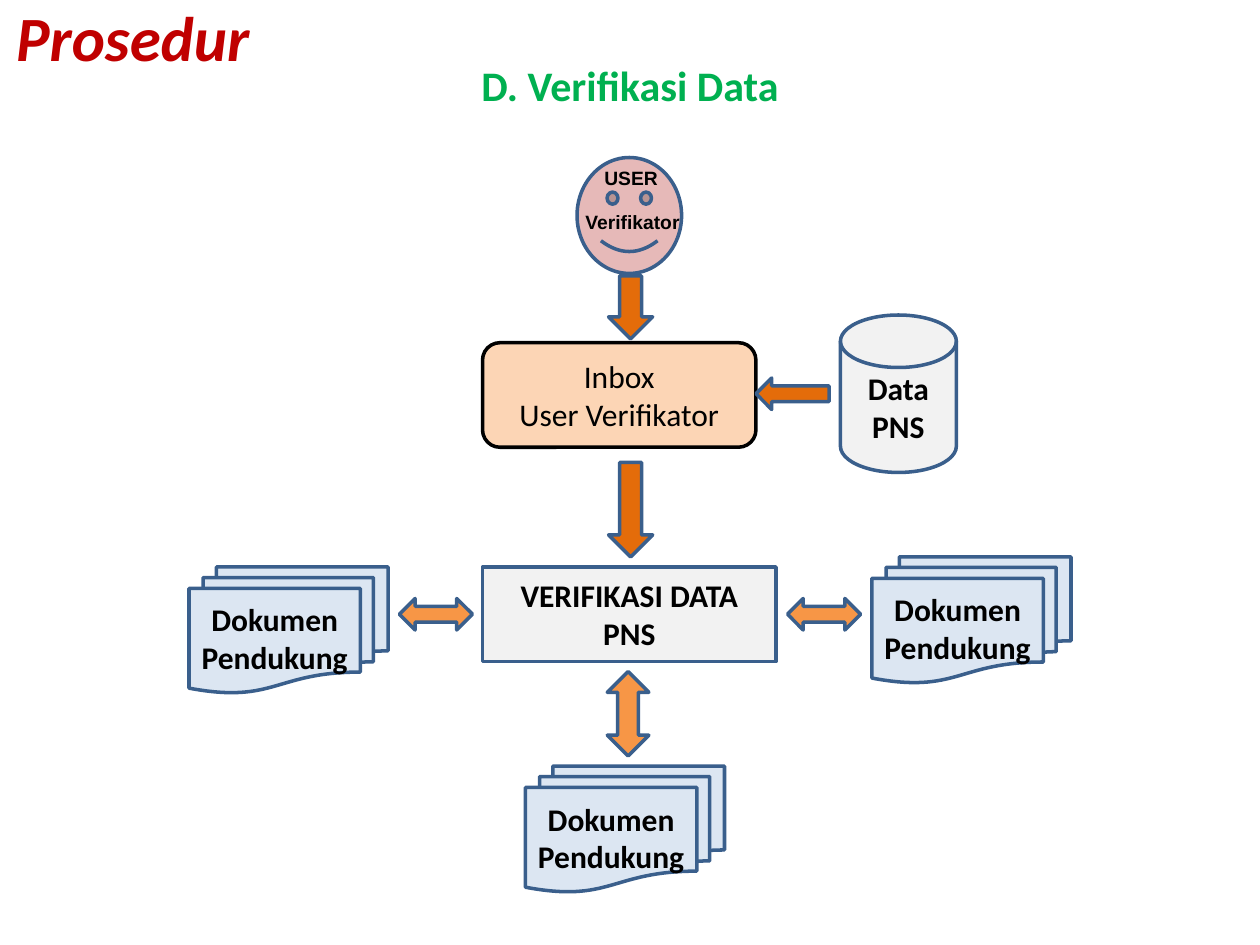
from lxml.etree import SubElement
from pptx import Presentation
from pptx.dml.color import RGBColor
from pptx.enum.shapes import MSO_SHAPE
from pptx.enum.text import MSO_ANCHOR, MSO_AUTO_SIZE, PP_ALIGN
from pptx.oxml.ns import qn
from pptx.util import Inches, Pt

COLORS = {
    "title": "C00000",
    "subtitle": "00B050",
    "text": "000000",
    "outline": "3A5F8C",
    "process": "F2F2F2",
    "user": "E6B9B8",
    "inbox": "FCD5B5",
    "document": "DCE6F2",
    "flow": "E46C0A",
    "exchange": "F79646",
}


class FlowSlide:
    def __init__(self, slide):
        self.slide = slide

    def color(self, name):
        return RGBColor.from_string(COLORS[name])

    def add_lines(self, frame, lines, size, color="text", font="Calibri",
                  bold=True, italic=False, align=PP_ALIGN.CENTER):
        for index, line in enumerate(lines):
            paragraph = frame.add_paragraph() if index else frame.paragraphs[0]
            paragraph.alignment = align
            run = paragraph.add_run()
            run.text = line
            run.font.name = font
            run.font.size = Pt(size)
            run.font.bold = bold
            run.font.italic = italic
            run.font.color.rgb = self.color(color)

    def heading(self, index, place, line, size, color, **style):
        holder = self.slide.placeholders[index]
        holder.left, holder.top, holder.width, holder.height = map(Inches, place)
        frame = holder.text_frame
        frame.auto_size = MSO_AUTO_SIZE.NONE
        self.add_lines(frame, [line], size, color, **style)
        SubElement(frame.paragraphs[0]._p.get_or_add_pPr(), qn("a:buNone"))

    def shape(self, kind, place, fill, lines=(), outline="outline", bold=True):
        shape = self.slide.shapes.add_shape(kind, *map(Inches, place))
        shape.shadow.inherit = False
        shape.fill.solid()
        shape.fill.fore_color.rgb = self.color(fill)
        shape.line.color.rgb = self.color(outline)
        shape.line.width = Pt(2)
        shape.text_frame.vertical_anchor = MSO_ANCHOR.MIDDLE
        self.add_lines(shape.text_frame, lines, 18, bold=bold)

    def label(self, place, line):
        frame = self.slide.shapes.add_textbox(*map(Inches, place)).text_frame
        frame.word_wrap = False
        frame.auto_size = MSO_AUTO_SIZE.SHAPE_TO_FIT_TEXT
        self.add_lines(frame, [line], 11, font="Arial")

    def documents(self, left, top):
        self.shape(MSO_SHAPE.FLOWCHART_MULTIDOCUMENT, (left, top, 1.58, 1),
                   "document", ["Dokumen", "Pendukung"])


def main():
    deck = Presentation()
    deck.slide_width, deck.slide_height = Inches(10), Inches(7.5)
    flow = FlowSlide(deck.slides.add_slide(deck.slide_layouts[1]))

    flow.heading(0, (0, 0, 2.08, 0.58), "Prosedur", 36, "title",
                 italic=True, align=PP_ALIGN.RIGHT)
    flow.heading(1, (0, 0.42, 10, 0.58), "D. Verifikasi Data", 24, "subtitle")

    flow.shape(MSO_SHAPE.RECTANGLE, (3.83, 4.5, 2.33, 0.75), "process",
               ["VERIFIKASI DATA PNS"])
    flow.shape(MSO_SHAPE.SMILEY_FACE, (4.58, 1.25, 0.83, 0.92), "user")
    flow.label((4.69, 1.27, 0.68, 0.29), "USER ")
    flow.label((4.54, 1.62, 0.96, 0.29), "Verifikator")
    flow.shape(MSO_SHAPE.FLOWCHART_ALTERNATE_PROCESS, (3.83, 2.72, 2.17, 0.83),
               "inbox", ["Inbox", "User Verifikator"], outline="text", bold=False)
    flow.shape(MSO_SHAPE.FLOWCHART_MAGNETIC_DISK, (6.67, 2.5, 0.92, 1.25),
               "process", ["Data PNS"])

    for top, height in ((2.19, 0.5), (3.67, 0.75)):
        flow.shape(MSO_SHAPE.DOWN_ARROW, (4.83, top, 0.35, height), "flow")
    flow.shape(MSO_SHAPE.LEFT_ARROW, (6, 3, 0.58, 0.25), "flow")

    for left, top in ((6.92, 4.42), (1.5, 4.5), (4.17, 6.08)):
        flow.documents(left, top)

    flow.shape(MSO_SHAPE.UP_DOWN_ARROW, (4.82, 5.33, 0.33, 0.67), "exchange")
    for left in (3.17, 6.25):
        flow.shape(MSO_SHAPE.LEFT_RIGHT_ARROW, (left, 4.75, 0.58, 0.25), "exchange")

    deck.save("out.pptx")


if __name__ == "__main__":
    main()
